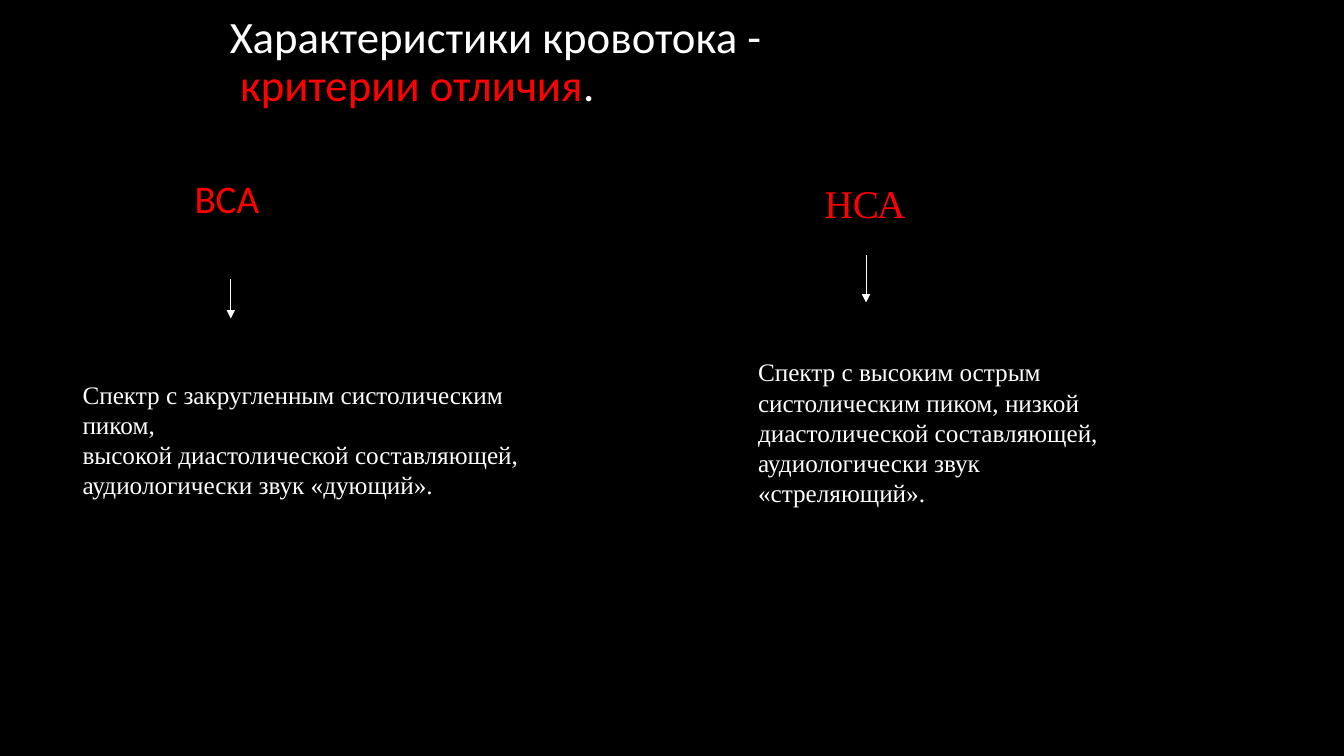
from lxml.etree import SubElement as Sub
from pptx import Presentation
from pptx.dml.color import RGBColor as RGB
from pptx.enum.shapes import MSO_CONNECTOR as Link
from pptx.enum.text import MSO_ANCHOR as Anchor, MSO_AUTO_SIZE as Fit, PP_ALIGN as Align
from pptx.oxml.ns import qn
from pptx.util import Inches, Pt

WHITE, RED = "FFFFFF", "FF0000"
SANS, SERIF = "Calibri", "Times New Roman"


def paint(hue):
    return RGB.from_string(hue)


def apply(item, style):
    for key, val in style.items():
        setattr(item, key, val)


def place(shape, box):
    apply(shape, dict(zip(("left", "top", "width", "height"), map(Inches, box))))


def frame(shape, anchor=Anchor.TOP):
    apply(shape.text_frame, {"word_wrap": True, "auto_size": Fit.NONE,
                             "vertical_anchor": anchor})
    return shape.text_frame


def write(para, text, size, face, hue):
    run = para.add_run()
    run.text = text
    apply(run.font, {"size": Pt(size), "name": face, "bold": False})
    run.font.color.rgb = paint(hue)


def label(slide, box, lines, size, hue):
    shape = slide.shapes.add_textbox(*map(Inches, box))
    text = frame(shape)
    for num, line in enumerate(lines):
        para = text.add_paragraph() if num else text.paragraphs[0]
        write(para, line, size, SERIF, hue)


def arrow(slide, x, top, end):
    line = slide.shapes.add_connector(Link.STRAIGHT, *map(Inches, (x, top, x, end)))
    line.line.width = Pt(0.75)
    line.line.color.rgb = paint(WHITE)
    Sub(line.line._get_or_add_ln(), qn("a:tailEnd"), type="triangle")
    Sub(line._element.spPr, qn("a:effectLst"))


def header(slide, box):
    title = slide.shapes.title
    place(title, box)
    para = frame(title, Anchor.MIDDLE).paragraphs[0]
    apply(para, {"alignment": Align.LEFT, "line_spacing": 0.9})
    write(para, "Характеристики кровотока -", 32, SANS, WHITE)
    para.add_line_break()
    write(para, " ", 32, SANS, WHITE)
    write(para, "критерии отличия", 32, SANS, RED)
    write(para, ".", 32, SANS, WHITE)


def inner(slide, box):
    x, y, wide, high = box
    body = slide.placeholders[1]
    place(body, box)
    para = frame(body).paragraphs[0]
    apply(para, {"alignment": Align.LEFT, "line_spacing": 0.9, "space_before": Pt(10)})
    props = para._p.get_or_add_pPr()
    props.set("marL", str(Inches(1.13)))
    props.set("indent", "0")
    Sub(props, qn("a:buNone"))
    write(para, "ВСА", 28, SANS, RED)
    arrow(slide, x + 1.59, y + 1.04, y + 1.43)
    label(slide, (x + 0.02, y + 1.98, 4.98, 1.3),
          ("Спектр с закругленным систолическим пиком,",
           "высокой диастолической составляющей,",
           "аудиологически звук «дующий»."), 18, WHITE)


def outer(slide, box):
    x, y, wide, high = box
    label(slide, (x + 0.66, y, 1.01, 0.57), ("НСА",), 28, RED)
    arrow(slide, x + 1.17, y + 0.8, y + 1.27)
    label(slide, (x, y + 1.76, wide, high - 1.76),
          ("Спектр с высоким острым",
           "систолическим пиком, низкой",
           "диастолической составляющей,",
           "аудиологически звук «стреляющий»."), 18, WHITE)


def main():
    deck = Presentation()
    apply(deck, {"slide_width": Inches(13.33), "slide_height": Inches(7.5)})
    slide = deck.slides.add_slide(deck.slide_layouts[1])
    fill = slide.background.fill
    fill.solid()
    fill.fore_color.rgb = paint("000000")
    header(slide, (2.18, 0, 9, 1.25))
    inner(slide, (0.7, 1.73, 5.89, 4.95))
    outer(slide, (7.42, 1.73, 3.95, 3.36))
    deck.save("out.pptx")


if __name__ == "__main__":
    main()
